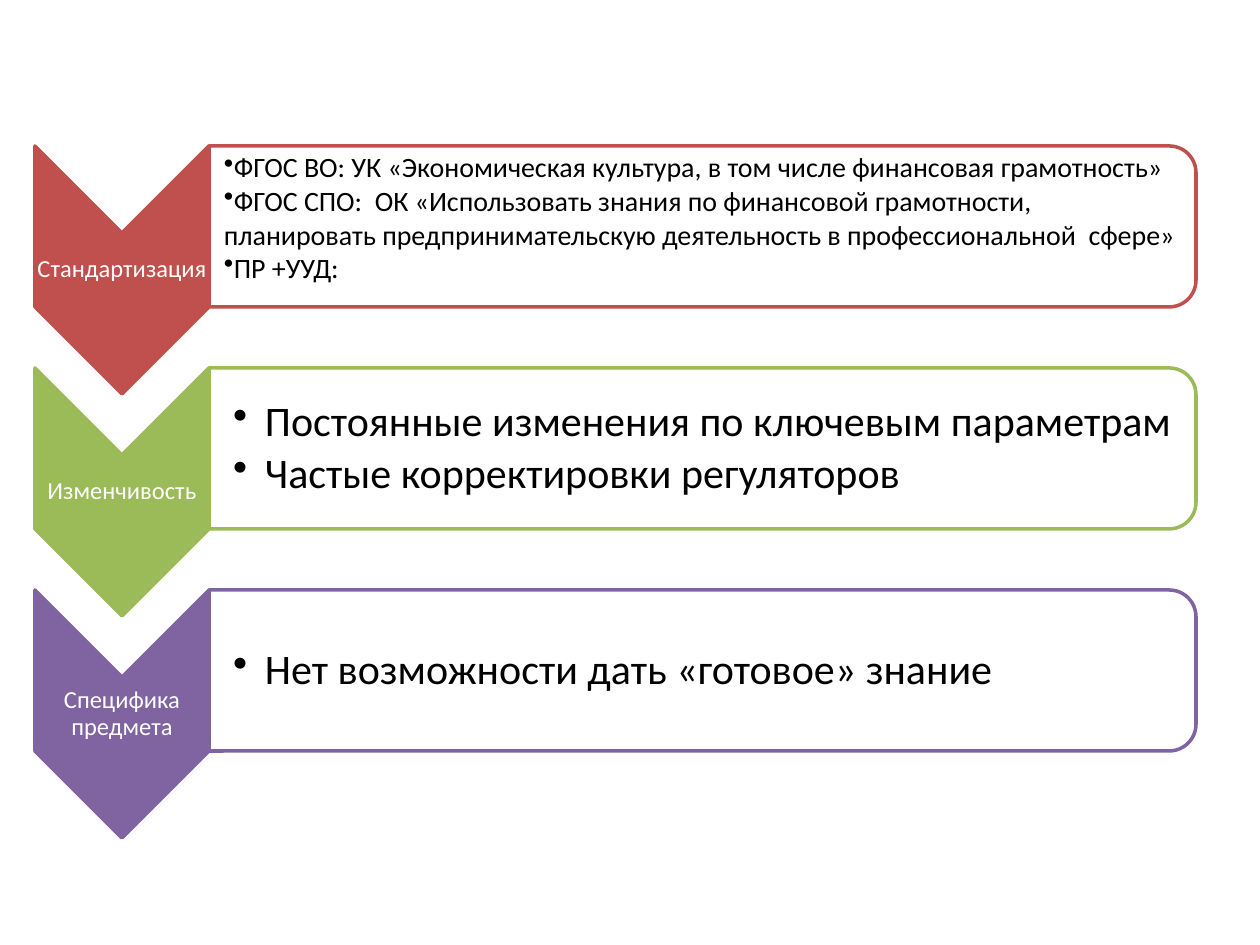
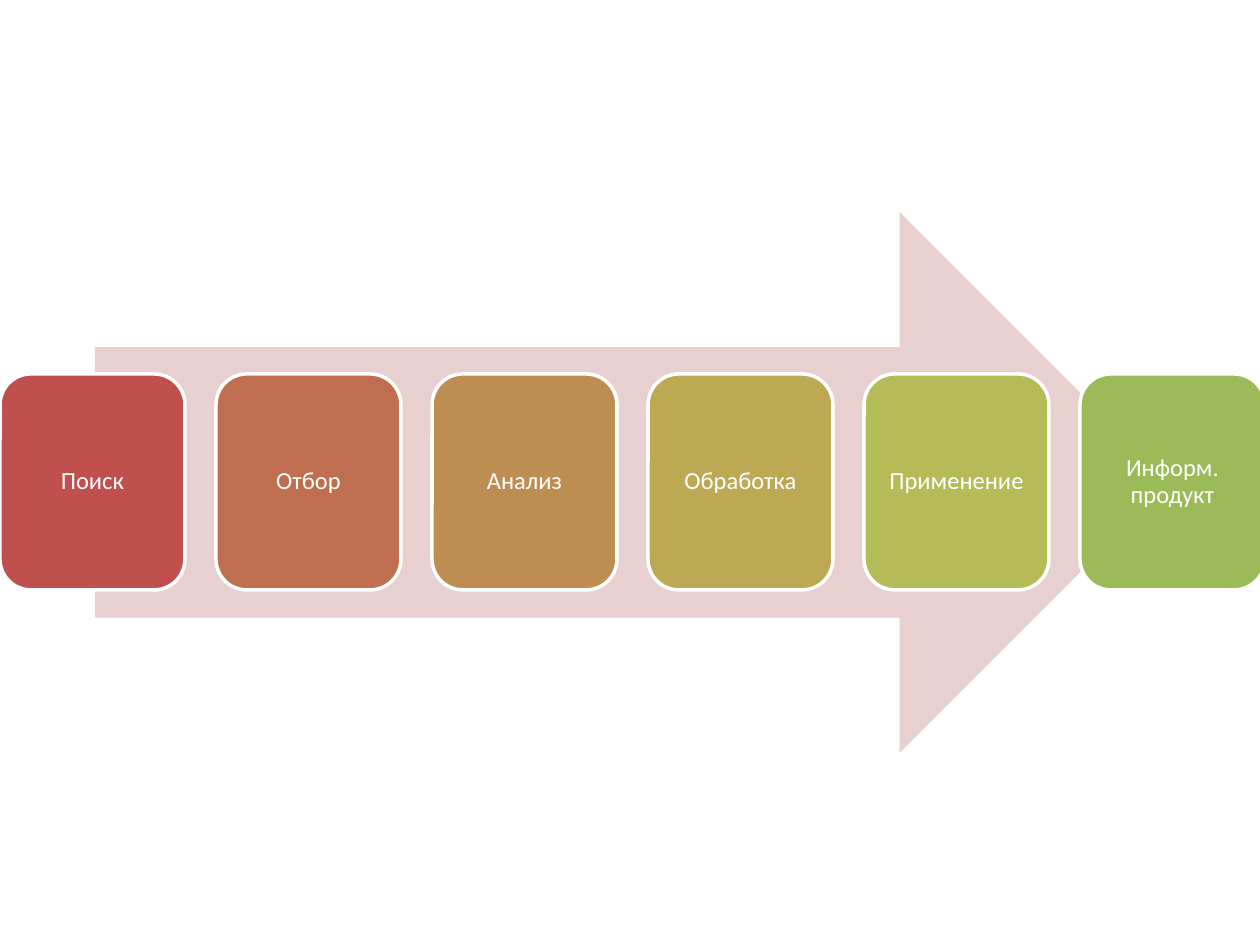
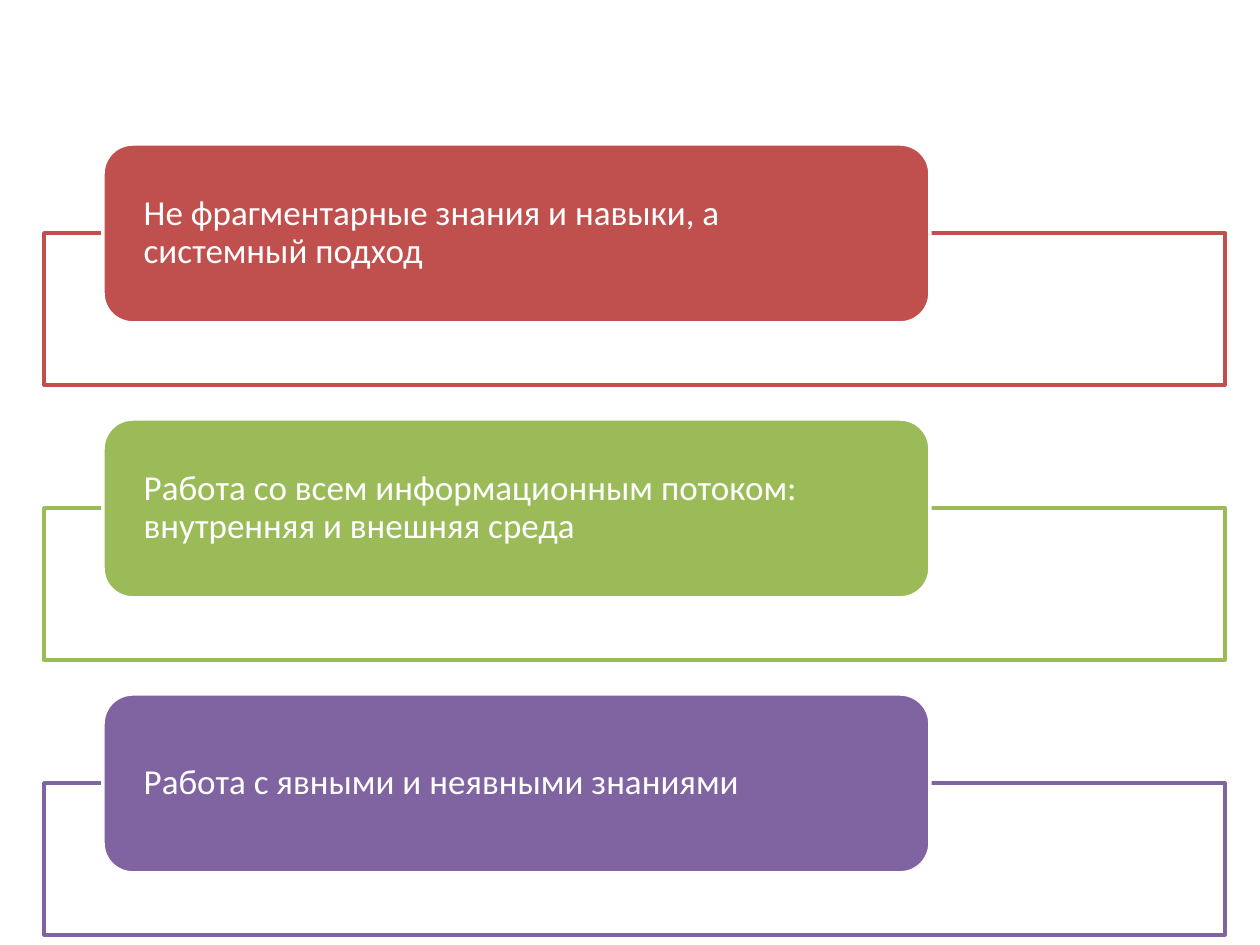
from lxml import etree
from pptx import Presentation
from pptx.dml.color import RGBColor
from pptx.enum.shapes import MSO_SHAPE
from pptx.enum.text import MSO_ANCHOR, PP_ALIGN
from pptx.oxml.ns import qn
from pptx.util import Pt

CHEVRON = MSO_SHAPE.CHEVRON
PANEL = MSO_SHAPE.ROUND_2_SAME_RECTANGLE
ARROW = MSO_SHAPE.RIGHT_ARROW
RECT = MSO_SHAPE.RECTANGLE
CARD = MSO_SHAPE.ROUNDED_RECTANGLE
LEFT, CENTER = PP_ALIGN.LEFT, PP_ALIGN.CENTER
MIDDLE = MSO_ANCHOR.MIDDLE

PX = 914400 / 126
FONT = "Calibri"
COLORS = {
    "red": "C0504D", "green": "9BBB59", "purple": "8064A2",
    "rust": "BF6F4F", "tan": "BE8D52", "gold": "BDA954", "lime": "B5BC57",
    "pink": "E8D0D0", "white": "FFFFFF", "black": "000000",
}
ACCENTS = ["red", "green", "purple"]


def add_shape(slide, kind, box, fill, line=None, rotation=0):
    sp = slide.shapes.add_shape(kind, *[round(v * PX) for v in box])
    sp.shadow.inherit = False
    sp.rotation = rotation
    sp.fill.solid()
    sp.fill.fore_color.rgb = RGBColor.from_string(COLORS[fill])
    if line:
        sp.line.color.rgb = RGBColor.from_string(COLORS[line])
        sp.line.width = Pt(2)
    else:
        sp.line.fill.background()
    return sp


def write(sp, lines, size, color="white", align=CENTER, insets=(1, 1),
          spacing=0.9, after=0, hanging=None):
    """Fill sp with paragraphs; hanging is the bullet indent in px, None for no bullets."""
    tf = sp.text_frame
    tf.word_wrap = True
    tf.vertical_anchor = MIDDLE
    tf.margin_left, tf.margin_right = [round(v * PX) for v in insets]
    tf.margin_top = tf.margin_bottom = round(PX)
    for i, line in enumerate(lines):
        p = tf.paragraphs[0] if i == 0 else tf.add_paragraph()
        p.alignment = align
        p.line_spacing = spacing
        p.space_after = Pt(after)
        if hanging is not None:
            pPr = p._p.get_or_add_pPr()
            pPr.set("marL", str(round(hanging * PX)))
            pPr.set("indent", str(round(-hanging * PX)))
            etree.SubElement(pPr, qn("a:buChar")).set("char", "•")
        r = p.add_run()
        r.text = line
        r.font.name = FONT
        r.font.size = Pt(size)
        r.font.color.rgb = RGBColor.from_string(COLORS[color])


prs = Presentation()
prs.slide_width, prs.slide_height = round(1260 * PX), round(945 * PX)
blank = prs.slide_layouts[6]

# Slide 1: chevrons with bulleted panels
slide = prs.slides.add_slide(blank)
dense = dict(size=16, insets=(15, 1), spacing=1.0, hanging=0)
large = dict(size=24, insets=(24, 3), after=3.6, hanging=32)
features = [
    ("Стандартизация", 144, dense, [
        "ФГОС ВО: УК «Экономическая культура, в том числе финансовая грамотность»",
        "ФГОС СПО:  ОК «Использовать знания по финансовой грамотности,  "
        "планировать предпринимательскую деятельность в профессиональной  сфере»",
        "ПР +УУД:",
    ]),
    ("Изменчивость", 154, large, [
        "Постоянные изменения по ключевым параметрам",
        "Частые корректировки регуляторов",
    ]),
    ("Специфика предмета", 154, large, ["Нет возможности дать «готовое» знание"]),
]
for i, (label, text_top, style, bullets) in enumerate(features):
    dy = i * 222
    accent = ACCENTS[i]
    # Boxes are given before their quarter turn
    add_shape(slide, CHEVRON, (-2, 183 + dy, 248, 174), accent, accent, 90)
    add_shape(slide, PANEL, (622, -267 + dy, 161, 987), "white", accent, 90)
    for box, lines, options in [
        ((35, 233 + dy, 174, 74), [label], dict(size=14)),
        ((209, text_top + dy, 979, 146), bullets,
         dict(style, color="black", align=LEFT)),
    ]:
        tb = slide.shapes.add_textbox(*[round(v * PX) for v in box])
        write(tb, lines, **options)

# Slide 2: steps along an arrow
slide = prs.slides.add_slide(blank)
add_shape(slide, ARROW, (95, 212, 1075, 541), "pink")
steps = [
    ("Поиск", "red"), ("Отбор", "rust"), ("Анализ", "tan"),
    ("Обработка", "gold"), ("Применение", "lime"), ("Информ. продукт", "green"),
]
for i, (step, fill) in enumerate(steps):
    sp = add_shape(slide, CARD, (i * 216, 374, 185, 216), fill, "white")
    write(sp, [step], 14, insets=(8, 8))

# Slide 3: principles on framed cards
slide = prs.slides.add_slide(blank)
principles = [
    "Не фрагментарные знания и навыки, а системный подход",
    "Работа со всем информационным потоком: внутренняя и внешняя среда",
    "Работа с явными и неявными знаниями",
]
for i, (principle, accent) in enumerate(zip(principles, ACCENTS)):
    dy = i * 275
    add_shape(slide, RECT, (44, 233 + dy, 1181, 152), "white", accent)
    sp = add_shape(slide, CARD, (103, 144 + dy, 827, 179), accent, "white")
    write(sp, [principle], 20, align=LEFT, insets=(32, 32))

prs.save("out.pptx")
